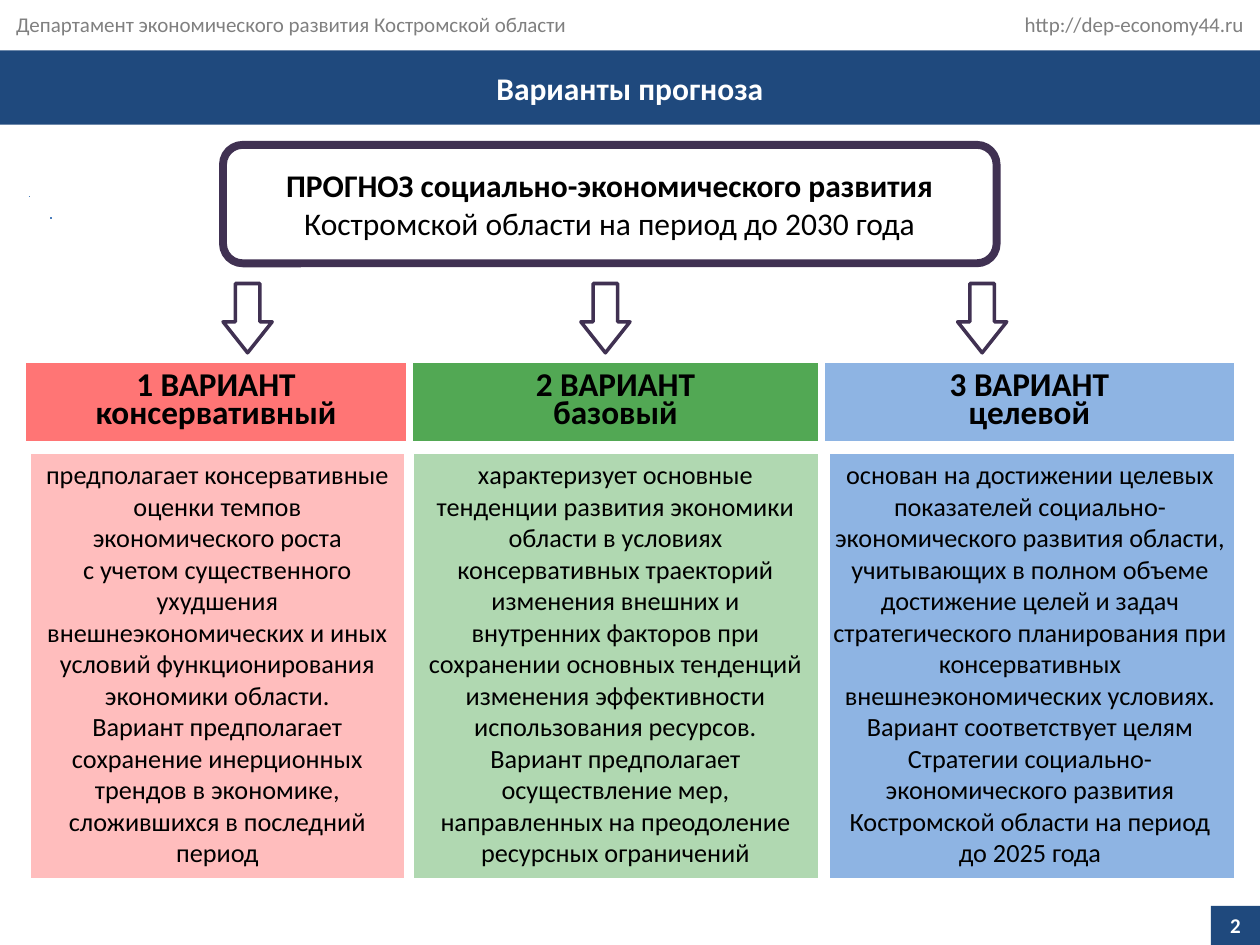
from dataclasses import dataclass

from lxml import etree
from pptx import Presentation
from pptx.dml.color import RGBColor
from pptx.enum.shapes import MSO_CONNECTOR as Connector, MSO_SHAPE as Shape
from pptx.enum.text import MSO_ANCHOR as Anchor, MSO_AUTO_SIZE as AutoSize, PP_ALIGN as Align
from pptx.oxml.ns import qn
from pptx.util import Inches, Pt

COLORS = {
    "navy": "1F497D", "plum": "403152", "white": "FFFFFF", "black": "000000",
    "gray": "808080", "dot": "4B7EBC",
    "red": "FF7575", "pink": "FFBDBD",
    "green": "52A854", "mint": "B0D8B1", "blue": "8EB4E3",
}
FONT = "Calibri"
HEAD_TOP, HEAD_HEIGHT = 2.88, 0.63
BODY_TOP, BODY_HEIGHT = 3.59, 3.39
ARROW_TOP, ARROW_WIDTH, ARROW_HEIGHT = 2.25, 0.39, 0.55


@dataclass
class Variant:
    heading: list[str]
    description: list[str]
    head_color: str
    body_color: str
    head_span: tuple[float, float]  # left, width
    body_span: tuple[float, float]
    text_span: tuple[float, float]
    arrow_left: float


VARIANTS = [
    Variant(
        ["1 ВАРИАНТ консервативный"],
        ["предполагает консервативные оценки темпов экономического роста",
         "с учетом существенного ухудшения внешнеэкономических и иных условий "
         "функционирования экономики области.",
         "Вариант предполагает сохранение инерционных трендов в экономике, "
         "сложившихся в последний период"],
        "red", "pink", (0.2, 3.03), (0.23, 2.99), (0.23, 2.99), 1.77),
    Variant(
        ["2 ВАРИАНТ", "базовый"],
        ["характеризует основные тенденции развития экономики области в условиях "
         "консервативных траекторий изменения внешних и внутренних факторов при "
         "сохранении основных тенденций изменения эффективности использования ресурсов.",
         "Вариант предполагает осуществление мер, направленных на преодоление "
         "ресурсных ограничений"],
        "green", "mint", (3.27, 3.23), (3.27, 3.24), (3.27, 3.23), 4.61),
    Variant(
        ["3 ВАРИАНТ", "целевой"],
        ["основан на достижении целевых показателей социально-экономического развития "
         "области, учитывающих в полном объеме достижение целей и задач стратегического "
         "планирования при консервативных внешнеэкономических условиях. Вариант "
         "соответствует целям Стратегии социально-экономического развития Костромской "
         "области на период",
         "до 2025 года"],
        "blue", "blue", (6.54, 3.26), (6.57, 3.24), (6.48, 3.39), 7.6),
]


def rgb(name: str) -> RGBColor:
    return RGBColor.from_string(COLORS[name])


def write(holder, paragraphs, *, size: float, color: str = "black", bold: bool = False,
          align=Align.CENTER, anchor=Anchor.MIDDLE, spacing: float | None = None) -> None:
    """Fill a shape; a paragraph is a string or a list of (text, bold) runs."""
    frame = holder.text_frame
    frame.word_wrap = True
    frame.vertical_anchor = anchor
    for index, content in enumerate(paragraphs):
        paragraph = frame.paragraphs[0] if index == 0 else frame.add_paragraph()
        paragraph.alignment = align
        paragraph.line_spacing = spacing
        runs = [(content, bold)] if isinstance(content, str) else content
        for text, is_bold in runs:
            run = paragraph.add_run()
            run.text = text
            run.font.name = FONT
            run.font.size = Pt(size)
            run.font.bold = is_bold
            run.font.color.rgb = rgb(color)


def add_box(slide, kind, left: float, top: float, width: float, height: float, *,
            fill: str | None = None, line: str | None = None, weight: float = 0.75):
    box = slide.shapes.add_shape(kind, Inches(left), Inches(top), Inches(width), Inches(height))
    box.shadow.inherit = False
    if fill:
        box.fill.solid()
        box.fill.fore_color.rgb = rgb(fill)
    else:
        box.fill.background()
    if line:
        box.line.color.rgb = rgb(line)
        box.line.width = Pt(weight)
    else:
        box.line.fill.background()
    return box


def add_text(slide, left: float, top: float, width: float, height: float, paragraphs, **style):
    area = slide.shapes.add_textbox(Inches(left), Inches(top), Inches(width), Inches(height))
    write(area, paragraphs, **style)
    return area


def add_dot(slide, left: float, top: float) -> None:
    dot = slide.shapes.add_connector(
        Connector.STRAIGHT, Inches(left), Inches(top), Inches(left + 0.01), Inches(top))
    dot.line.color.rgb = rgb("dot")
    dot.line.width = Pt(0.75)
    etree.SubElement(dot._element.spPr, qn("a:effectLst"))


def add_variant(slide, variant: Variant) -> None:
    # Description panel with its text
    left, width = variant.body_span
    add_box(slide, Shape.RECTANGLE, left, BODY_TOP, width, BODY_HEIGHT,
            fill=variant.body_color, line="white", weight=2)
    left, width = variant.text_span
    description = add_text(slide, left, BODY_TOP, width, BODY_HEIGHT, variant.description,
                           size=15, anchor=Anchor.TOP)
    description.text_frame.auto_size = AutoSize.SHAPE_TO_FIT_TEXT

    # Heading
    left, width = variant.head_span
    heading = add_box(slide, Shape.RECTANGLE, left, HEAD_TOP, width, HEAD_HEIGHT,
                      fill=variant.head_color, line="white")
    write(heading, variant.heading, size=19, bold=True, spacing=0.7)

    # Arrow from the forecast
    arrow = add_box(slide, Shape.DOWN_ARROW, variant.arrow_left, ARROW_TOP,
                    ARROW_WIDTH, ARROW_HEIGHT, line="plum", weight=2)
    arrow.adjustments[0] = 0.5
    arrow.adjustments[1] = 0.63


def main() -> None:
    deck = Presentation()
    deck.slide_width, deck.slide_height = Inches(10), Inches(7.5)
    slide = deck.slides.add_slide(deck.slide_layouts[6])

    # Department name and site address
    for text, align in (("Департамент экономического развития Костромской области", Align.LEFT),
                        ("http://dep-economy44.ru", Align.RIGHT)):
        left, width = (0.03, 6) if align == Align.LEFT else (6.97, 3)
        add_text(slide, left, 0, width, 0.38, [text], size=12, color="gray", align=align)

    # Title band
    title = add_box(slide, Shape.RECTANGLE, 0, 0.4, 10, 0.59, fill="navy")
    write(title, ["Варианты прогноза"], size=18, color="white", bold=True)

    # Small marks at the left
    add_dot(slide, 0.23, 1.56)
    add_dot(slide, 0.4, 1.73)

    # Forecast
    forecast = add_box(slide, Shape.ROUNDED_RECTANGLE, 1.77, 1.15, 6.14, 0.94,
                       line="plum", weight=4.5)
    write(forecast, [[("ПРОГНОЗ социально-экономического развития ", True),
                      ("Костромской области на период до 2030 года", False)]], size=18)

    # Three variants
    for variant in VARIANTS:
        add_variant(slide, variant)

    # Page number
    page = add_box(slide, Shape.RECTANGLE, 9.61, 7.19, 0.39, 0.31, fill="navy")
    write(page, ["2"], size=12, color="white", bold=True)

    deck.save("out.pptx")


if __name__ == "__main__":
    main()
